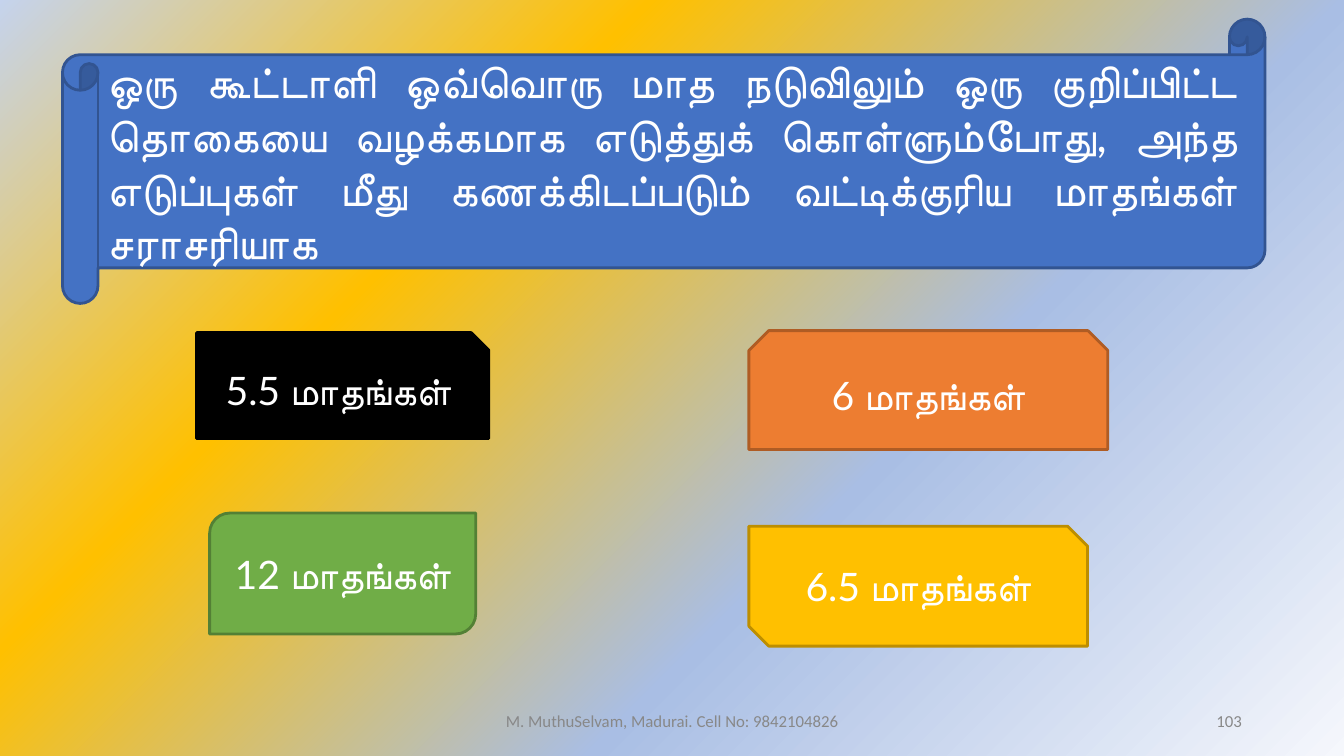
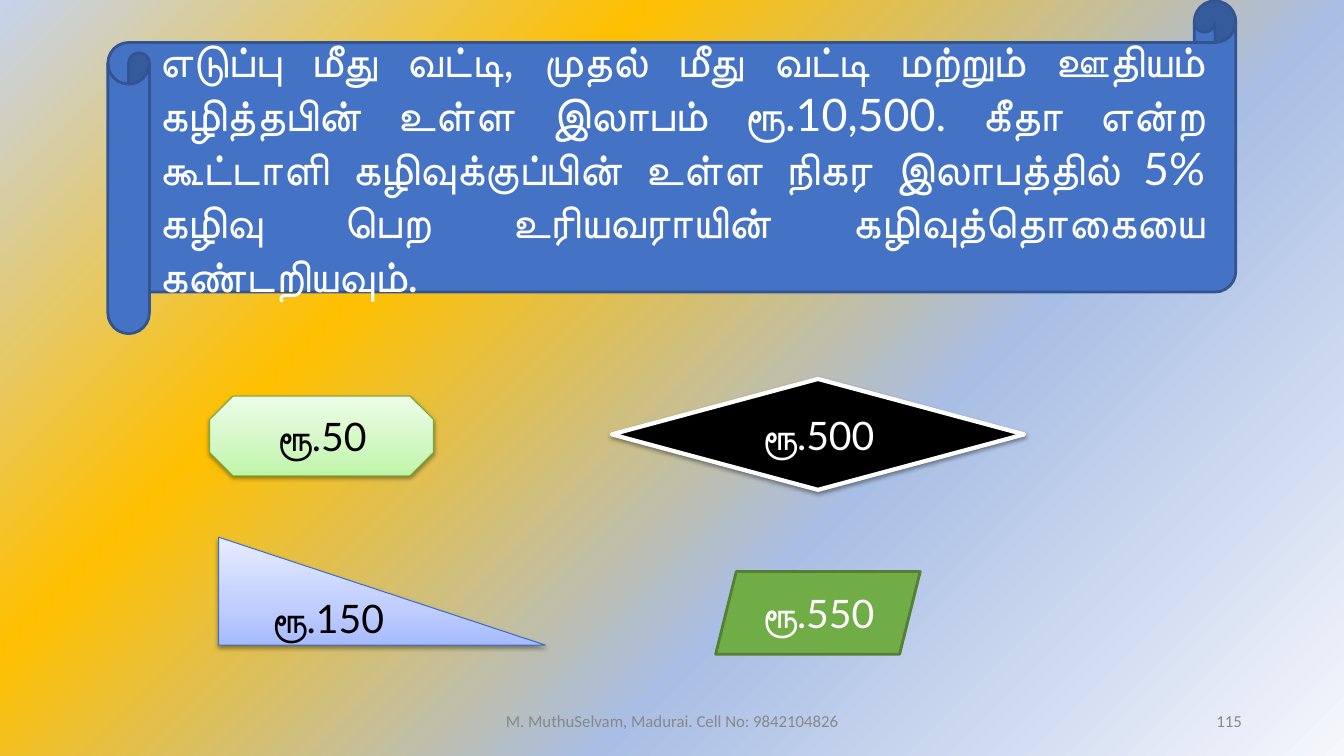
from lxml import etree
from pptx import Presentation
from pptx.dml.color import RGBColor
from pptx.enum.shapes import MSO_SHAPE as SHAPE
from pptx.enum.text import MSO_ANCHOR, PP_ALIGN as ALIGN
from pptx.oxml.ns import qn
from pptx.util import Pt

PX = 9144  # 100 px to the inch
C = {
    "white": "FFFFFF", "black": "000000", "grey": "888888",
    "blue": "4472C4", "blue_edge": "325491",
    "orange": "ED7D31", "orange_edge": "AF5C24",
    "gold": "FFC000", "gold_edge": "BD8E00",
    "green": "70AD47", "green_edge": "538035",
    "mint_edge": "6DAC43", "sky_edge": "3F6FC3",
}
GRADIENTS = {
    "backdrop": [(0, "F5F7FC"), (36, "A9BEE4"), (69, "FFC000"), (100, "C5D3ED")],
    "mint": [(0, "BEF5A7"), (35, "D1F7C2"), (100, "EDFDE7")],
    "sky": [(0, "A6BBFF"), (35, "C0CEFF"), (100, "E7ECFF")],
}
QUESTION = {"size": Pt(32), "name": "Lato"}
ANSWER = {"size": Pt(28), "name": "Lato"}
FOOTER = {"size": Pt(12), "name": "Calibri"}
FOOTER_TEXT = "M. MuthuSelvam, Madurai. Cell No: 9842104826"

# Answers: shape, box, text, fill, line, line width, text colour, shadow
SLIDES = [
    {
        "number": "103",
        "box": (62, 19, 1193, 282),
        "question": "ஒரு கூட்டாளி ஒவ்வொரு மாத நடுவிலும் ஒரு குறிப்பிட்ட தொகையை "
                    "வழக்கமாக எடுத்துக் கொள்ளும்போது, அந்த எடுப்புகள் மீது "
                    "கணக்கிடப்படும் வட்டிக்குரிய மாதங்கள் சராசரியாக",
        "answers": [
            (SHAPE.SNIP_1_RECTANGLE, (195, 330, 290, 105), "5.5 மாதங்கள்",
             "black", "black", 2, "white", False),
            (SHAPE.SNIP_2_SAME_RECTANGLE, (743, 328, 356, 118), "6 மாதங்கள்",
             "orange", "orange_edge", 2, "white", False),
            (SHAPE.SNIP_2_DIAG_RECTANGLE, (743, 522, 336, 119), "6.5 மாதங்கள்",
             "gold", "gold_edge", 2, "white", False),
            (SHAPE.ROUND_2_DIAG_RECTANGLE, (208, 509, 264, 120), "12 மாதங்கள்",
             "green", "green_edge", 2, "white", False),
        ],
    },
    {
        "number": "115",
        "box": (107, 1, 1119, 330),
        "question": "எடுப்பு மீது வட்டி, முதல் மீது வட்டி மற்றும் ஊதியம் கழித்தபின் "
                    "உள்ள இலாபம் ரூ.10,500. கீதா என்ற கூட்டாளி கழிவுக்குப்பின் உள்ள "
                    "நிகர இலாபத்தில் 5% கழிவு பெற உரியவராயின் கழிவுத்தொகையை "
                    "கண்டறியவும்.",
        "answers": [
            (SHAPE.OCTAGON, (208, 393, 222, 79), "ரூ.50",
             "mint", "mint_edge", 0.75, "black", True),
            (SHAPE.DIAMOND, (607, 376, 409, 110), "ரூ.500",
             "black", "white", 3, "white", True),
            (SHAPE.RIGHT_TRIANGLE, (217, 533, 324, 107), "ரூ.150",
             "sky", "sky_edge", 0.75, "black", True),
            (SHAPE.PARALLELOGRAM, (710, 567, 203, 82), "ரூ.550",
             "green", "green_edge", 2, "white", False),
        ],
    },
]


def set_gradient(fill, owner, name):
    """Give fill the named stops; return the emptied gradient for its direction."""
    fill.gradient()
    grad = owner.find(".//" + qn("a:gradFill"))
    for child in list(grad):
        grad.remove(child)
    stops = etree.SubElement(grad, qn("a:gsLst"))
    for pos, color in GRADIENTS[name]:
        stop = etree.SubElement(stops, qn("a:gs"), pos=str(pos * 1000))
        etree.SubElement(stop, qn("a:srgbClr"), val=color)
    return grad


def put_text(sp, text, align, color, font):
    tf = sp.text_frame
    tf.word_wrap = True
    tf.vertical_anchor = MSO_ANCHOR.MIDDLE
    p = tf.paragraphs[0]
    p.alignment = align
    r = p.add_run()
    r.text = text
    r.font.color.rgb = RGBColor.from_string(C[color])
    for key, value in font.items():
        setattr(r.font, key, value)


prs = Presentation()
prs.slide_width, prs.slide_height = 12192000, 6858000

for page in SLIDES:
    s = prs.slides.add_slide(prs.slide_layouts[6])
    grad = set_gradient(s.background.fill, s.background._cSld, "backdrop")
    shade = etree.SubElement(grad, qn("a:path"), path="circle")
    etree.SubElement(shade, qn("a:fillToRect"), l="100000", t="100000")
    etree.SubElement(grad, qn("a:tileRect"), r="-100000", b="-100000")

    scroll = (SHAPE.HORIZONTAL_SCROLL, page["box"], page["question"],
              "blue", "blue_edge", 2, "white", False)
    for item in [scroll] + page["answers"]:
        kind, box, text, fill, edge, width, color, shadow = item
        sp = s.shapes.add_shape(kind, *(v * PX for v in box))
        sp.shadow.inherit = False
        spPr = sp._element.spPr
        if fill in GRADIENTS:
            grad = set_gradient(sp.fill, spPr, fill)
            etree.SubElement(grad, qn("a:lin"), ang="16200000", scaled="1")
        else:
            sp.fill.solid()
            sp.fill.fore_color.rgb = RGBColor.from_string(C[fill])
        sp.line.color.rgb = RGBColor.from_string(C[edge])
        sp.line.width = Pt(width)
        if shadow:
            outer = etree.SubElement(spPr.find(qn("a:effectLst")), qn("a:outerShdw"),
                                     blurRad="40000", dist="20000", dir="5400000",
                                     rotWithShape="0")
            tint = etree.SubElement(outer, qn("a:srgbClr"), val=C["black"])
            etree.SubElement(tint, qn("a:alpha"), val="38000")
        if item is scroll:
            put_text(sp, text, ALIGN.JUSTIFY, color, QUESTION)
        else:
            put_text(sp, text, ALIGN.CENTER, color, ANSWER)

    for left, width, text, align in [
        (442, 450, FOOTER_TEXT, ALIGN.CENTER),
        (942, 300, page["number"], ALIGN.RIGHT),
    ]:
        tb = s.shapes.add_textbox(left * PX, 695 * PX, width * PX, 40 * PX)
        put_text(tb, text, align, "grey", FOOTER)

prs.save("out.pptx")
